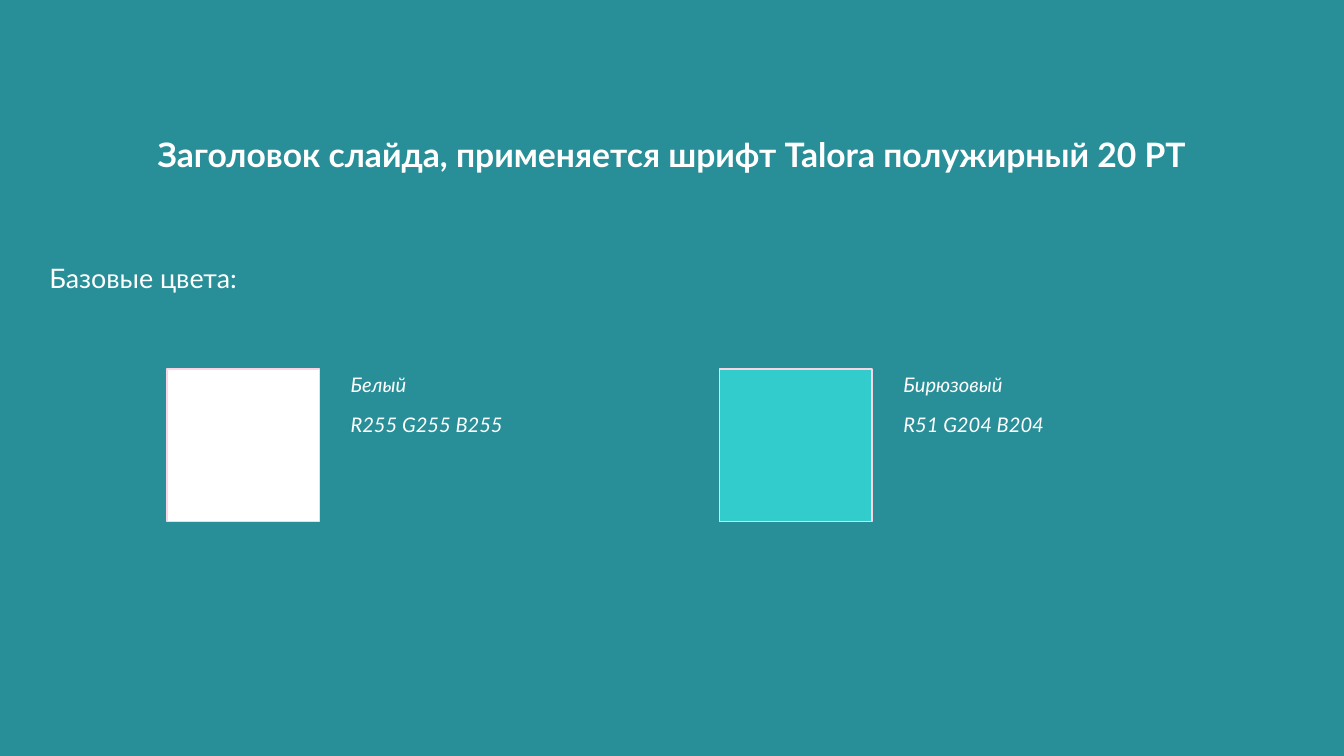
from pptx import Presentation
from pptx.dml.color import RGBColor
from pptx.enum.shapes import MSO_SHAPE
from pptx.enum.text import MSO_ANCHOR, PP_ALIGN
from pptx.util import Inches, Pt

TEAL = RGBColor(0x28, 0x8F, 0x98)
WHITE = RGBColor(0xFF, 0xFF, 0xFF)
TURQUOISE = RGBColor(0x33, 0xCC, 0xCC)
PINK = RGBColor(0xFA, 0xD5, 0xE5)

TITLE = "Заголовок слайда, применяется шрифт Talora полужирный 20 PT"
SUBTITLE = "Базовые цвета:"
SWATCHES = [
    (WHITE, ["Белый", "R255 G255 B255"]),
    (TURQUOISE, ["Бирюзовый", "R51 G204 B204"]),
]

SWATCH_LEFT, SWATCH_TOP = 1.38, 3.05
SWATCH_SIZE, SWATCH_STEP = 1.26, 4.57
LABEL_GAP, LABEL_WIDTH = 0.16, 2.76


def write_text(box, lines, size, bold=False, italic=False,
               align=PP_ALIGN.LEFT, anchor=MSO_ANCHOR.TOP, inset=0.1):
    frame = box.text_frame
    frame.word_wrap = True
    frame.vertical_anchor = anchor
    frame.margin_left = frame.margin_right = Inches(inset)
    frame.margin_top = frame.margin_bottom = Inches(0.05)
    for index, line in enumerate(lines):
        para = frame.add_paragraph() if index else frame.paragraphs[0]
        para.alignment = align
        para.line_spacing = 0.9
        para.space_before = Pt(11.1 if index else 0)
        span = para.add_run()
        span.text = line
        span.font.name = "Lato"
        span.font.size = Pt(size)
        span.font.bold = bold
        span.font.italic = italic
        span.font.color.rgb = WHITE


deck = Presentation()
deck.slide_width, deck.slide_height = Inches(11.11), Inches(6.25)
page = deck.slides.add_slide(deck.slide_layouts[5])
page.background.fill.solid()
page.background.fill.fore_color.rgb = TEAL

title = page.shapes.title
title.left, title.top = Inches(0), Inches(1)
title.width, title.height = deck.slide_width, Inches(0.59)
write_text(title, [TITLE], 20, bold=True, align=PP_ALIGN.CENTER,
           anchor=MSO_ANCHOR.MIDDLE, inset=0.05)

subtitle = page.shapes.add_textbox(Inches(0.31), Inches(2.14), Inches(10.5), Inches(0.49))
write_text(subtitle, [SUBTITLE], 16)

for column, (color, label_lines) in enumerate(SWATCHES):
    left = SWATCH_LEFT + column * SWATCH_STEP
    swatch = page.shapes.add_shape(
        MSO_SHAPE.RECTANGLE, Inches(left), Inches(SWATCH_TOP),
        Inches(SWATCH_SIZE), Inches(SWATCH_SIZE))
    swatch.shadow.inherit = False
    swatch.fill.solid()
    swatch.fill.fore_color.rgb = color
    swatch.line.color.rgb = PINK
    swatch.line.width = Pt(0.75)
    label = page.shapes.add_textbox(
        Inches(left + SWATCH_SIZE + LABEL_GAP), Inches(SWATCH_TOP),
        Inches(LABEL_WIDTH), Inches(SWATCH_SIZE))
    write_text(label, label_lines, 12, italic=True)

deck.save("out.pptx")
